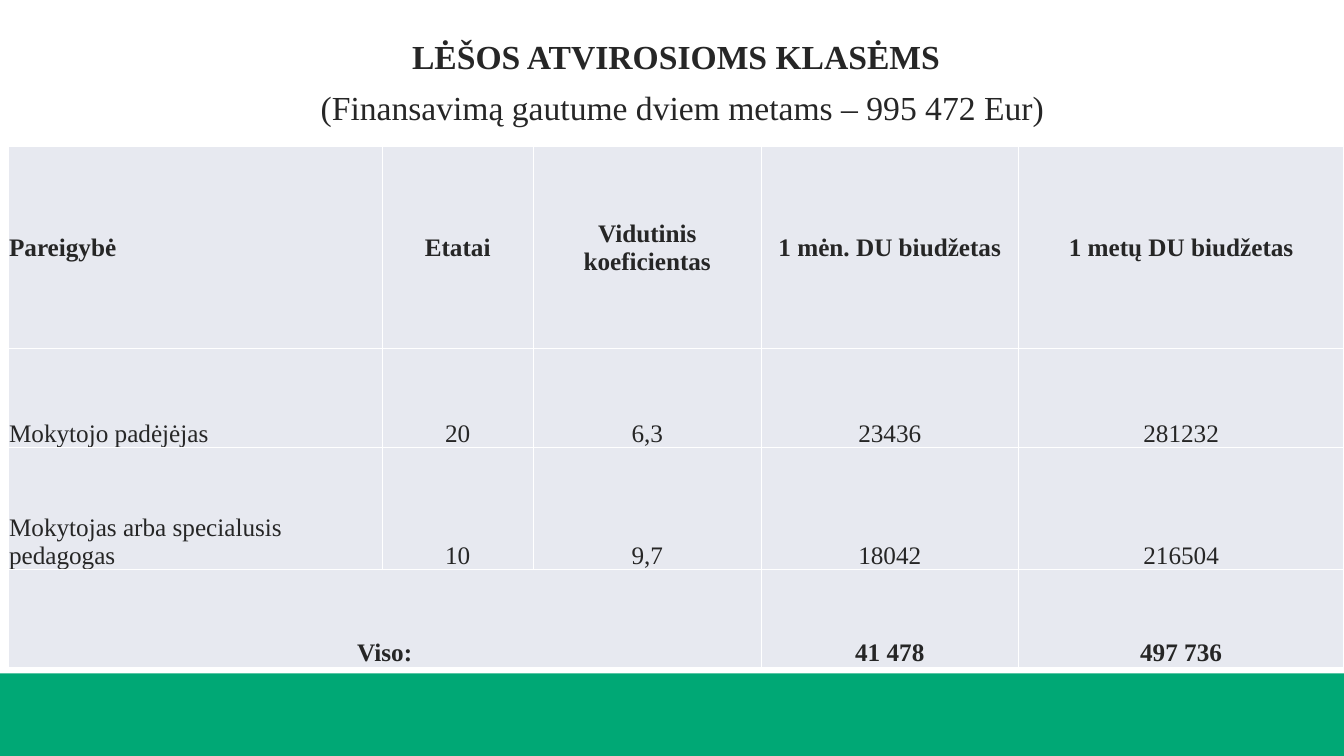
from lxml import etree
from pptx import Presentation
from pptx.dml.color import RGBColor
from pptx.enum import shapes, text
from pptx.oxml import ns
from pptx.util import Inches, Pt

FONT = "Times New Roman"
INK, GREEN, CELL, WHITE = "262626", "00A875", "E7E9F0", "FFFFFF"

COLUMN_WIDTHS = [3.71, 1.5, 2.26, 2.55, 3.23]
ROW_HEIGHTS = [2.01, 0.98, 1.21, 0.97]
BUDGET = [
    ["Pareigybė", "Etatai", "Vidutinis koeficientas",
     "1 mėn. DU biudžetas", "1 metų DU biudžetas"],
    ["Mokytojo padėjėjas", "20", "6,3", "23436", "281232"],
    ["Mokytojas arba specialusis pedagogas", "10", "9,7", "18042", "216504"],
    ["Viso:", "", "", "41 478", "497 736"],
]


def color(hex_code):
    return RGBColor.from_string(hex_code)


def style_font(font, size, bold):
    font.name = FONT
    font.size = Pt(size)
    font.bold = bold
    font.color.rgb = color(INK)


def add_footer_band(slide, left, top, width, height):
    band = slide.shapes.add_shape(
        shapes.MSO_SHAPE.RECTANGLE,
        Inches(left), Inches(top), Inches(width), Inches(height))
    band.shadow.inherit = False
    band.fill.solid()
    band.fill.fore_color.rgb = color(GREEN)
    band.line.fill.background()


def add_heading(slide, left, top, width, height):
    heading = slide.shapes.add_textbox(
        Inches(left), Inches(top), Inches(width), Inches(height))
    frame = heading.text_frame
    frame.word_wrap = True
    frame.vertical_anchor = text.MSO_ANCHOR.BOTTOM
    line = frame.paragraphs[0]
    line.text = "LĖŠOS ATVIROSIOMS KLASĖMS\v "
    line.alignment = text.PP_ALIGN.CENTER
    line.line_spacing = 0.9
    title, spacer = line.runs
    funding = line.add_run()
    funding.text = "(Finansavimą gautume dviem metams – 995 472 Eur)"
    style_font(title.font, 24, True)
    style_font(spacer.font, 36, False)
    style_font(funding.font, 24, False)


def add_borders(cell, hex_code, points):
    properties = cell._tc.get_or_add_tcPr()
    for side in ("a:lnL", "a:lnR", "a:lnT", "a:lnB"):
        border = etree.SubElement(properties, ns.qn(side), w=str(Pt(points)))
        fill = etree.SubElement(border, ns.qn("a:solidFill"))
        etree.SubElement(fill, ns.qn("a:srgbClr"), val=hex_code)


def fill_cell(cell, wording, bold, anchor, alignment):
    add_borders(cell, WHITE, 1)
    cell.fill.solid()
    cell.fill.fore_color.rgb = color(CELL)
    cell.margin_left = cell.margin_right = cell.margin_top = Inches(0.01)
    cell.margin_bottom = 0
    cell.vertical_anchor = anchor
    cell.text_frame.text = wording
    paragraph = cell.text_frame.paragraphs[0]
    paragraph.alignment = alignment
    style_font(paragraph.font, 18, bold)
    for run in paragraph.runs:
        style_font(run.font, 18, bold)


def add_budget_table(slide, left, top):
    table = slide.shapes.add_table(
        len(BUDGET), len(COLUMN_WIDTHS), Inches(left), Inches(top),
        Inches(sum(COLUMN_WIDTHS)), Inches(sum(ROW_HEIGHTS))).table
    for column, width in zip(table.columns, COLUMN_WIDTHS):
        column.width = Inches(width)
    for row, height in zip(table.rows, ROW_HEIGHTS):
        row.height = Inches(height)

    total = len(BUDGET) - 1
    table.cell(total, 0).merge(table.cell(total, 2))
    for r, positions in enumerate(BUDGET):
        anchor = text.MSO_ANCHOR.MIDDLE if r == 0 else text.MSO_ANCHOR.BOTTOM
        for c, wording in enumerate(positions):
            is_label = c == 0 and r != total
            alignment = text.PP_ALIGN.LEFT if is_label else text.PP_ALIGN.CENTER
            fill_cell(table.cell(r, c), wording, r in (0, total), anchor, alignment)


def main():
    deck = Presentation()
    deck.slide_width, deck.slide_height = Inches(13.33), Inches(7.5)
    slide = deck.slides.add_slide(deck.slide_layouts[6])
    add_footer_band(slide, 0, 6.68, 13.33, 0.82)
    add_budget_table(slide, 0.08, 1.45)
    add_heading(slide, 0.08, 0, 13.25, 1.35)
    deck.save("out.pptx")


if __name__ == "__main__":
    main()
